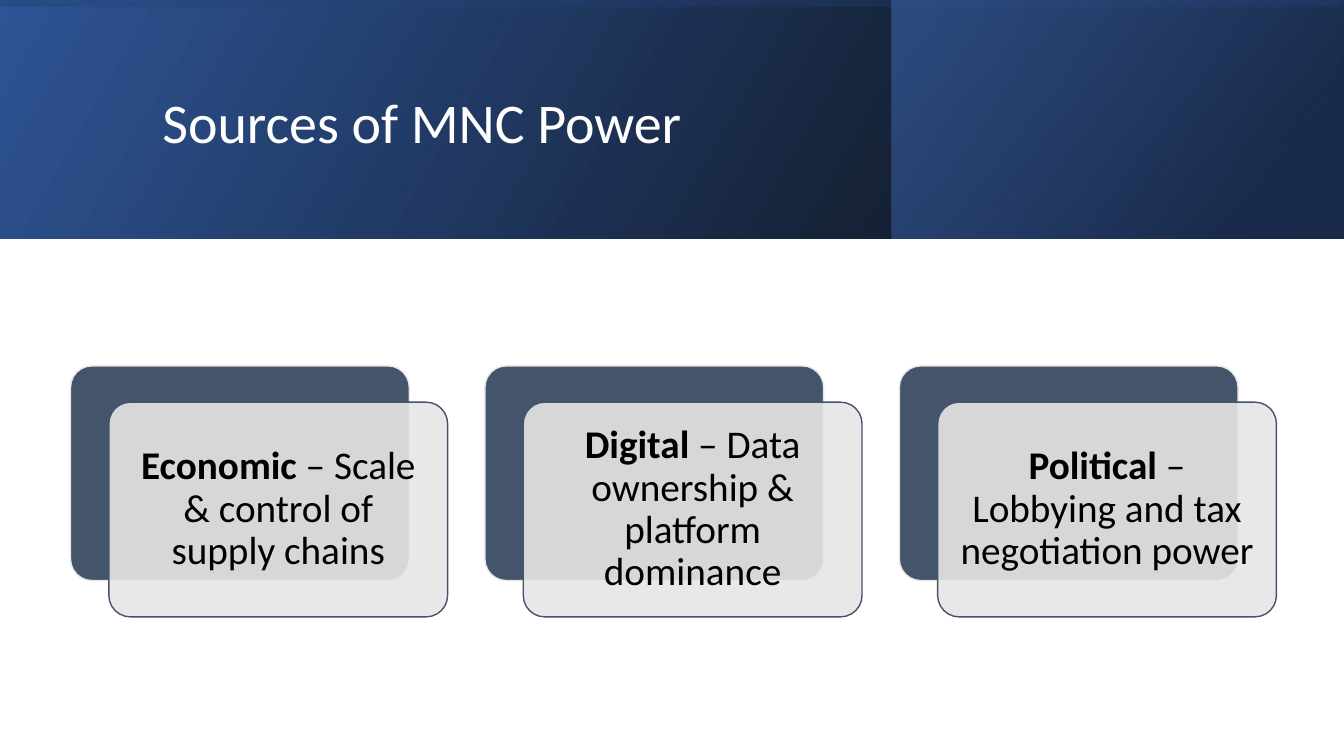
import dataclasses

import lxml.etree
import pptx
import pptx.dml.color
import pptx.enum.shapes
import pptx.enum.text
import pptx.oxml.ns
import pptx.util

Inches = pptx.util.Inches
Pt = pptx.util.Pt
PRESET = pptx.enum.shapes.MSO_SHAPE
ALIGN = pptx.enum.text.PP_ALIGN
MIDDLE = pptx.enum.text.MSO_ANCHOR.MIDDLE
qn = pptx.oxml.ns.qn


@dataclasses.dataclass(frozen=True)
class Theme:
    font: str = "Calibri"
    title_size: int = 40
    card_size: int = 28
    line_spacing: float = 0.9
    white: str = "FFFFFF"
    black: str = "000000"
    slate: str = "44546A"
    pale: str = "E7E6E6"
    blue: str = "2F5597"
    navy: str = "203864"
    bright_blue: str = "4472C4"


def rgb(value):
    return pptx.dml.color.RGBColor.from_string(value)


def add_color(parent, color, opacity):
    node = lxml.etree.SubElement(parent, qn("a:srgbClr"), val=color)
    if opacity < 100:
        lxml.etree.SubElement(node, qn("a:alpha"), val=str(opacity * 1000))


class SlideBuilder:
    def __init__(self, page, theme):
        self.page = page
        self.theme = theme

    def style_para(self, para, size, color, align):
        para.alignment = align
        para.line_spacing = self.theme.line_spacing
        para.font.name = self.theme.font
        para.font.size = Pt(size)
        para.font.color.rgb = rgb(color)

    def shape(self, preset, left, top, width, height):
        box = self.page.shapes.add_shape(
            preset, Inches(left), Inches(top), Inches(width), Inches(height))
        box.shadow.inherit = False
        return box

    def band(self, left, top, width, height, stops, angle, rotation=0):
        """Add a mirrored rectangle; stops are (position, colour, opacity)."""
        box = self.shape(PRESET.RECTANGLE, left, top, width, height)
        box.rotation = rotation
        box.line.fill.background()
        box.fill.gradient()
        properties = box._element.spPr
        properties.find(qn("a:xfrm")).set("flipH", "1")
        gradient = properties.find(qn("a:gradFill"))
        for child in list(gradient):
            gradient.remove(child)
        gradient.set("rotWithShape", "1")
        stop_list = lxml.etree.SubElement(gradient, qn("a:gsLst"))
        for position, color, opacity in stops:
            stop = lxml.etree.SubElement(
                stop_list, qn("a:gs"), pos=str(position * 1000))
            add_color(stop, color, opacity)
        lxml.etree.SubElement(
            gradient, qn("a:lin"), ang=str(angle * 60000), scaled="0")

    def title(self, text, left, top, width, height):
        box = self.page.shapes.title
        box.left, box.top = Inches(left), Inches(top)
        box.width, box.height = Inches(width), Inches(height)
        frame = box.text_frame
        frame.text = text
        frame.auto_size = pptx.enum.text.MSO_AUTO_SIZE.NONE
        frame.vertical_anchor = MIDDLE
        self.style_para(frame.paragraphs[0], self.theme.title_size,
                        self.theme.white, ALIGN.LEFT)
        # Later shapes lie on top, so the title goes after the bands.
        self.page.shapes._spTree.append(box._element)

    def panel(self, left, top, width, height, fill, line):
        box = self.shape(PRESET.ROUNDED_RECTANGLE, left, top, width, height)
        box.adjustments[0] = 0.1
        box.fill.solid()
        box.fill.fore_color.rgb = rgb(fill)
        box.line.color.rgb = rgb(line)
        box.line.width = Pt(1)
        return box

    def card(self, left, top, heading, detail):
        """Add a dark panel with a translucent text panel shifted over it."""
        theme = self.theme
        width, height = 3.36, 2.13
        self.panel(left, top, width, height, theme.slate, theme.pale)
        front = self.panel(left + 0.38, top + 0.36, width, height,
                           theme.pale, theme.slate)
        color = front._element.spPr.find(qn("a:solidFill"))[0]
        lxml.etree.SubElement(color, qn("a:alpha"), val="90000")
        frame = front.text_frame
        frame.word_wrap = True
        frame.vertical_anchor = MIDDLE
        frame.margin_left = frame.margin_right = Inches(0.12)
        frame.margin_top = frame.margin_bottom = Inches(0.12)
        para = frame.paragraphs[0]
        self.style_para(para, theme.card_size, theme.black, ALIGN.CENTER)
        span = para.add_run()
        span.text = heading
        span.font.bold = True
        para.add_run().text = f" – {detail}"


def main():
    deck = pptx.Presentation()
    deck.slide_width, deck.slide_height = Inches(13.33), Inches(7.5)
    theme = Theme()
    title_only = deck.slide_layouts.get_by_name("Title Only")
    builder = SlideBuilder(deck.slides.add_slide(title_only), theme)

    builder.band(0, 0, 13.33, 2.37,
                 [(0, theme.black, 96), (100, theme.blue, 100)], 330)
    builder.band(8.84, 0, 4.48, 2.37,
                 [(19, theme.navy, 68), (100, theme.bright_blue, 48)], 320)
    builder.band(5.48, -5.48, 2.37, 13.33,
                 [(23, theme.blue, 16), (99, theme.black, 45)], 350, 270)
    builder.title("Sources of MNC Power", 1.51, 0.38, 10.63, 1.72)

    sources = [
        ("Economic", "Scale & control of supply chains"),
        ("Digital", "Data ownership & platform dominance"),
        ("Political", "Lobbying and tax negotiation power"),
    ]
    for index, (heading, detail) in enumerate(sources):
        builder.card(0.7 + 4.11 * index, 3.63, heading, detail)

    deck.save("out.pptx")


if __name__ == "__main__":
    main()
